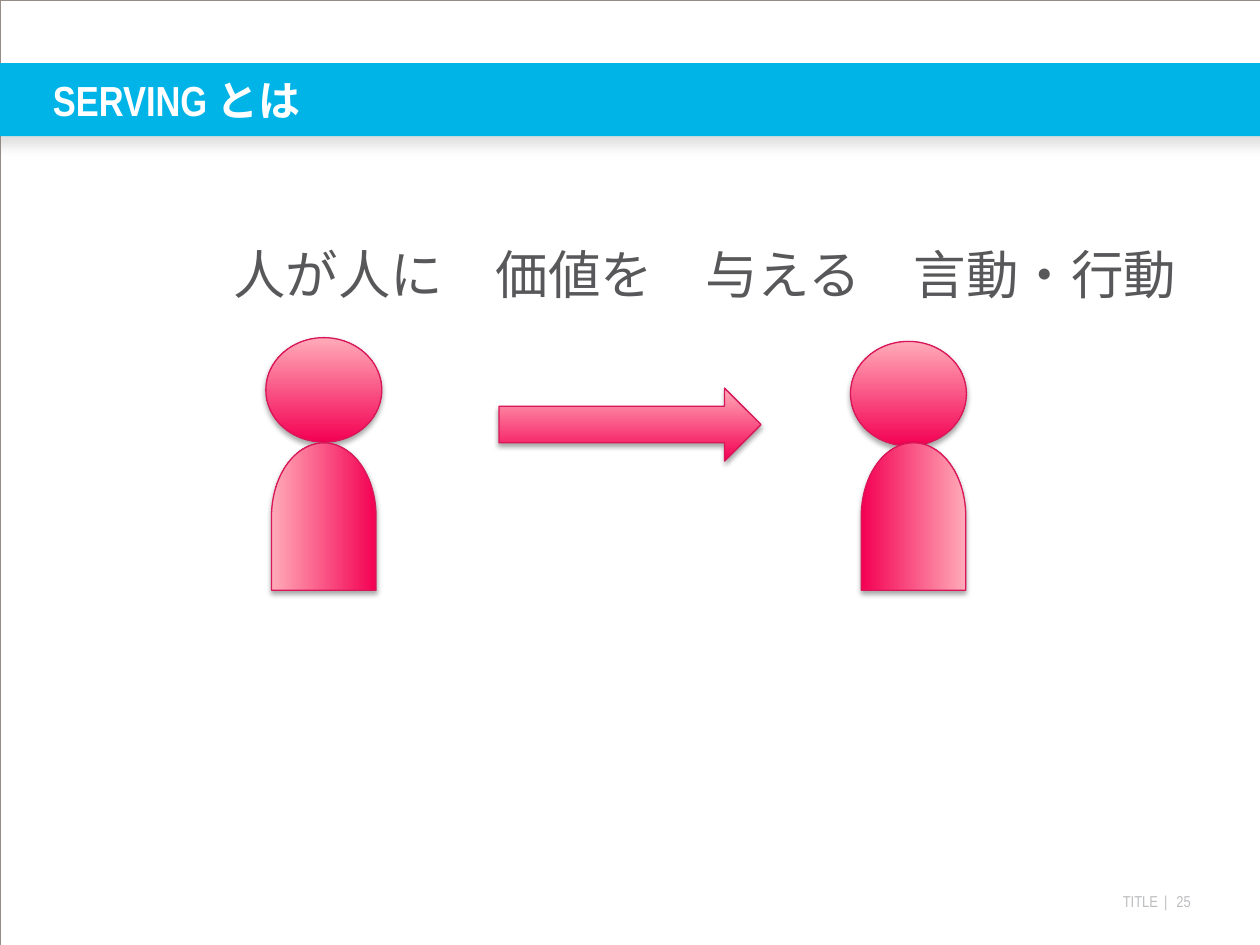
from lxml.etree import SubElement
from pptx import Presentation
from pptx.dml.color import RGBColor as Color
from pptx.enum.shapes import MSO_SHAPE as Shape
from pptx.enum.text import MSO_ANCHOR as Anchor, PP_ALIGN as Align
from pptx.oxml.ns import qn
from pptx.util import Inches, Pt

# Content
TITLE = "SERVING とは"
STATEMENT = "人が人に　価値を　与える　言動・行動"
FOOTER = ("TITLE", " | ", "25")

# Head box (left, top) and body centre, with the body mirrored or not
PEOPLE = [
    {"head": (2.11, 2.68), "body_centre": (2.57, 4.1), "mirrored": False},
    {"head": (6.75, 2.71), "body_centre": (7.25, 4.1), "mirrored": True},
]
HEAD_SIZE = (0.92, 0.83)
BODY_SIZE = (1.17, 0.83)
ARROW = (3.96, 3.08, 2.08, 0.58)

THEME = {
    "band": "01B4E7",
    "frame": "958D85",
    "gradient": ("F40053", "FFABB8"),
    "outline": "D91659",
    "title": {"name": "Arial Narrow", "size": Pt(24), "bold": True, "color": "FFFFFF"},
    "statement": {"name": "TeX Gyre Schola", "size": Pt(30), "color": "58585A"},
    "footer": {"name": "Arial Narrow", "size": Pt(9), "color": "BCBDC0"},
    "band_shadow": {"color": "808080", "alpha": 25, "blur": 7, "distance": 4.8},
    "figure_shadow": {"color": "000000", "alpha": 35, "blur": 3.1, "distance": 1.8},
}


def add_shadow(shape, color, alpha, blur, distance):
    """Give the shape a soft shadow that falls straight down."""
    shape.shadow.inherit = False
    effects = shape.element.spPr.find(qn("a:effectLst"))
    shadow = SubElement(effects, qn("a:outerShdw"), {
        "blurRad": str(Pt(blur)), "dist": str(Pt(distance)),
        "dir": "5400000", "rotWithShape": "0"})
    tint = SubElement(shadow, qn("a:srgbClr"), val=color)
    SubElement(tint, qn("a:alpha"), val=str(alpha * 1000))


def add_figure(slide, kind, area):
    """Add a pink gradient shape with outline and shadow."""
    shape = slide.shapes.add_shape(kind, *map(Inches, area))
    shape.fill.gradient()
    shape.fill.gradient_angle = 90
    for position, (stop, color) in enumerate(zip(shape.fill.gradient_stops, THEME["gradient"])):
        stop.position = position
        stop.color.rgb = Color.from_string(color)
    shape.line.color.rgb = Color.from_string(THEME["outline"])
    shape.line.width = Pt(0.75)
    add_shadow(shape, **THEME["figure_shadow"])
    return shape


def add_text(slide, area, spans, style, align=Align.LEFT, anchor=Anchor.TOP):
    """Add a one-paragraph text box without margins and return its spans."""
    frame = slide.shapes.add_textbox(*map(Inches, area)).text_frame
    settings = {"word_wrap": True, "vertical_anchor": anchor, "margin_left": 0,
                "margin_right": 0, "margin_top": 0, "margin_bottom": 0}
    for name, value in settings.items():
        setattr(frame, name, value)
    para = frame.paragraphs[0]
    para.alignment = align
    for text in spans:
        span = para.add_run()
        span.text = text
        for name, value in THEME[style].items():
            if name == "color":
                span.font.color.rgb = Color.from_string(value)
            else:
                setattr(span.font, name, value)
    return para.runs


def add_person(slide, head, body_centre, mirrored):
    add_figure(slide, Shape.OVAL, (*head, *HEAD_SIZE))
    corner = [centre - size / 2 for centre, size in zip(body_centre, BODY_SIZE)]
    body = add_figure(slide, Shape.FLOWCHART_DELAY, (*corner, *BODY_SIZE))
    body.rotation = 270
    if mirrored:
        body.element.spPr.find(qn("a:xfrm")).set("flipV", "1")


def main():
    deck = Presentation()
    deck.slide_width, deck.slide_height = Inches(10), Inches(7.5)
    page = deck.slides.add_slide(deck.slide_layouts[6])

    # Footer, with the separator spaced out
    separator = add_text(page, (7.7, 7.08, 1.75, 0.15), FOOTER, "footer", Align.RIGHT)[1]
    separator.font.element.set("spc", "150") if hasattr(separator.font, "element") else \
        separator._r.get_or_add_rPr().set("spc", "150")

    # Page frame
    frame = page.shapes.add_shape(Shape.RECTANGLE, 0, 0, deck.slide_width, deck.slide_height)
    frame.shadow.inherit = False
    frame.fill.background()
    frame.line.color.rgb = Color.from_string(THEME["frame"])
    frame.line.width = Pt(0.13)

    # Title band
    band = page.shapes.add_shape(Shape.RECTANGLE, *map(Inches, (-0.08, 0.5, 10.17, 0.58)))
    band.fill.solid()
    band.fill.fore_color.rgb = Color.from_string(THEME["band"])
    band.line.fill.background()
    add_shadow(band, **THEME["band_shadow"])
    add_text(page, (0.42, 0.5, 9.58, 0.58), [TITLE], "title", anchor=Anchor.MIDDLE)

    # Statement
    add_text(page, (1.85, 1.92, 7.65, 0.6), [STATEMENT], "statement")

    # Two people and the arrow between them
    for person in PEOPLE:
        add_person(page, **person)
    add_figure(page, Shape.RIGHT_ARROW, ARROW)

    deck.save("out.pptx")


if __name__ == "__main__":
    main()
